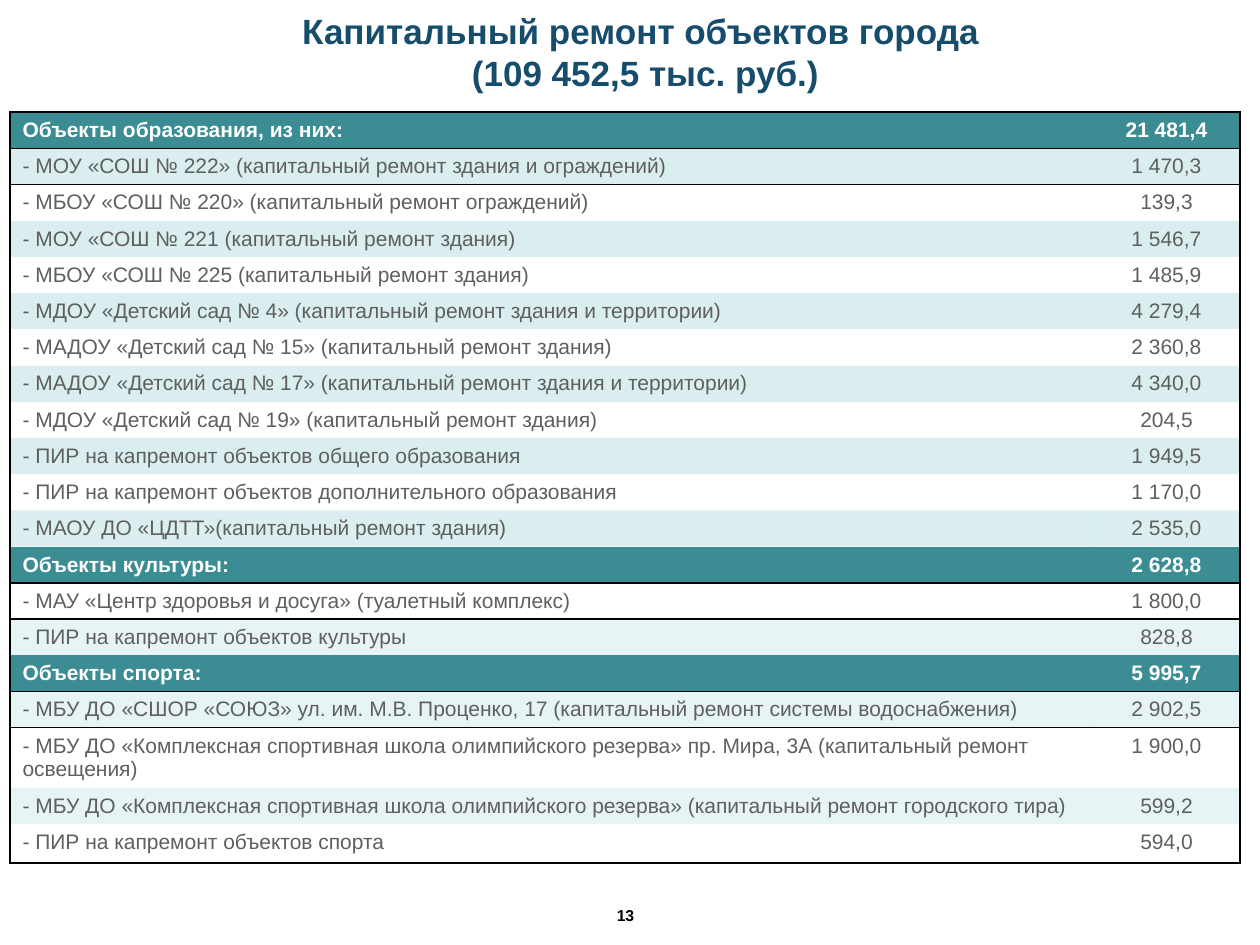
import pptx
import pptx.dml.color
import pptx.enum.text
import pptx.oxml
import pptx.oxml.ns
import pptx.util

Cm, Pt = pptx.util.Cm, pptx.util.Pt
ALIGN, ANCHOR = pptx.enum.text.PP_ALIGN, pptx.enum.text.MSO_ANCHOR
AUTO = pptx.enum.text.MSO_AUTO_SIZE
NO_GRID = "{2D5ABB26-0587-4C30-8999-92F81FD0307C}"
TEAL, PALE, MID, LIGHT = ("3C8C93", 100), ("DAEDEF", 100), ("BBE0E3", 50), ("84C9CE", 20)
ROW, TWO_LINES, LAST = 0.73, 1.21, 0.79

TITLE_FONT = {"size": Pt(20), "name": "Arial", "bold": True}
HEAD_FONT = {"size": Pt(12), "name": "Arial", "bold": True}
ITEM_FONT = {"size": Pt(12), "name": "Arial", "bold": False}
NUMBER_FONT = {"size": Pt(9), "name": "Arial", "bold": True}

ROWS = [
    ("Объекты образования, из них:", "21 481,4", TEAL, ROW),
    ("- МОУ «СОШ № 222» (капитальный ремонт здания и ограждений)", "1 470,3", PALE, ROW),
    ("- МБОУ «СОШ № 220» (капитальный ремонт ограждений)", "139,3", None, ROW),
    ("- МОУ «СОШ № 221 (капитальный ремонт здания)", "1 546,7", PALE, ROW),
    ("- МБОУ «СОШ № 225 (капитальный ремонт здания)", "1 485,9", None, ROW),
    ("- МДОУ «Детский сад № 4» (капитальный ремонт здания и территории)", "4 279,4", PALE, ROW),
    ("- МАДОУ «Детский сад № 15» (капитальный ремонт здания)", "2 360,8", None, ROW),
    ("- МАДОУ «Детский сад № 17» (капитальный ремонт здания и территории)", "4 340,0", PALE, ROW),
    ("- МДОУ «Детский сад № 19» (капитальный ремонт здания)", "204,5", None, ROW),
    ("- ПИР на капремонт объектов общего образования", "1 949,5", PALE, ROW),
    ("- ПИР на капремонт объектов дополнительного образования", "1 170,0", None, ROW),
    ("- МАОУ ДО «ЦДТТ»(капитальный ремонт здания)", "2 535,0", MID, ROW),
    ("Объекты культуры:", "2 628,8", TEAL, ROW),
    ("- МАУ «Центр здоровья и досуга» (туалетный комплекс)", "1 800,0", None, ROW),
    ("- ПИР на капремонт объектов культуры", "828,8", LIGHT, ROW),
    ("Объекты спорта:", "5 995,7", TEAL, ROW),
    ("- МБУ ДО «СШОР «СОЮЗ» ул. им. М.В. Проценко, 17 "
     "(капитальный ремонт системы водоснабжения)", "2 902,5", LIGHT, ROW),
    ("- МБУ ДО «Комплексная спортивная школа олимпийского резерва» пр. Мира, 3А "
     "(капитальный ремонт освещения)", "1 900,0", None, TWO_LINES),
    ("- МБУ ДО «Комплексная спортивная школа олимпийского резерва» "
     "(капитальный ремонт городского тира)", "599,2", LIGHT, ROW),
    ("- ПИР на капремонт объектов спорта", "594,0", None, LAST),
]


def rgb(value):
    """Turn a hex string into a colour."""
    return pptx.dml.color.RGBColor.from_string(value)


def set_attrs(obj, values):
    """Set every attribute named in a dict."""
    for name, value in values.items():
        setattr(obj, name, value)


def write(tf, text, font, color, align):
    """Put one formatted paragraph into a text frame."""
    tf.text = text
    p = tf.paragraphs[0]
    p.alignment = align
    for r in p.runs:
        set_attrs(r.font, font)
        r.font.color.rgb = rgb(color)


def paint(cell, fill):
    """Fill a cell with a colour and opacity, or leave it clear."""
    if fill is None:
        cell.fill.background()
        return
    color, opacity = fill
    cell.fill.solid()
    cell.fill.fore_color.rgb = rgb(color)
    if opacity < 100:
        clr = cell.fill._xPr.xpath("./a:solidFill/a:srgbClr")[0]
        alpha = clr.makeelement(pptx.oxml.ns.qn("a:alpha"), {"val": str(opacity * 1000)})
        clr.append(alpha)


def draw_borders(cell, sides):
    """Draw black one-point lines on the given sides, in L, R, T, B order."""
    tcPr = cell._tc.get_or_add_tcPr()
    for i, side in enumerate(sides):
        tcPr.insert(i, pptx.oxml.parse_xml(
            f'<a:ln{side} {pptx.oxml.ns.nsdecls("a")} w="{Pt(1)}">'
            f'<a:solidFill><a:srgbClr val="000000"/></a:solidFill></a:ln{side}>'))


def add_title(s, x, y, w, h):
    """Place and format the slide title."""
    sp = s.shapes.title
    set_attrs(sp, {"left": Cm(x), "top": Cm(y), "width": Cm(w), "height": Cm(h)})
    tf = sp.text_frame
    set_attrs(tf, {"word_wrap": True, "auto_size": AUTO.NONE, "vertical_anchor": ANCHOR.MIDDLE})
    write(tf, "Капитальный ремонт объектов города\v (109 452,5 тыс. руб.)",
          TITLE_FONT, "164C6C", ALIGN.CENTER)


def add_repairs(s, x, y, w, value_w):
    """Place the table of repair costs with its value column at the right."""
    h = sum(row[3] for row in ROWS)
    frame = s.shapes.add_table(len(ROWS), 2, Cm(x), Cm(y), Cm(w), Cm(h))
    frame.element.xpath(".//a:tableStyleId")[0].text = NO_GRID
    table = frame.table
    set_attrs(table, {"first_row": False, "horz_banding": False})
    table.columns[0].width, table.columns[1].width = Cm(w - value_w), Cm(value_w)
    for i, (name, value, fill, row_h) in enumerate(ROWS):
        table.rows[i].height = Cm(row_h)
        head = fill == TEAL
        font, color = (HEAD_FONT, "FFFFFF") if head else (ITEM_FONT, "5F5F5F")
        top = "T" if i == 0 or ROWS[i - 1][2] == TEAL else ""
        bottom = "B" if head or i == len(ROWS) - 1 else ""
        columns = ((name, ALIGN.LEFT, "L"), (value, ALIGN.CENTER, "R"))
        for j, (text, align, side) in enumerate(columns):
            cell = table.cell(i, j)
            write(cell.text_frame, text, font, color, align)
            paint(cell, fill)
            draw_borders(cell, side + top + bottom)


def add_number(s, x, y, w, h):
    """Place the page number."""
    tf = s.shapes.add_textbox(Cm(x), Cm(y), Cm(w), Cm(h)).text_frame
    set_attrs(tf, {"word_wrap": True, "auto_size": AUTO.SHAPE_TO_FIT_TEXT,
                   "vertical_anchor": ANCHOR.MIDDLE})
    write(tf, "13", NUMBER_FONT, "000000", ALIGN.CENTER)


def main():
    """Build the slide and save it."""
    prs = pptx.Presentation()
    set_attrs(prs, {"slide_width": Cm(25.4), "slide_height": Cm(19.05)})
    s = prs.slides.add_slide(prs.slide_layouts[5])
    add_title(s, 0.43, 0.33, 24.97, 1.4)
    add_repairs(s, 0.2, 2.26, 24.8, 2.97)
    add_number(s, 11.91, 18.14, 1.4, 0.64)
    prs.save("out.pptx")


if __name__ == "__main__":
    main()
